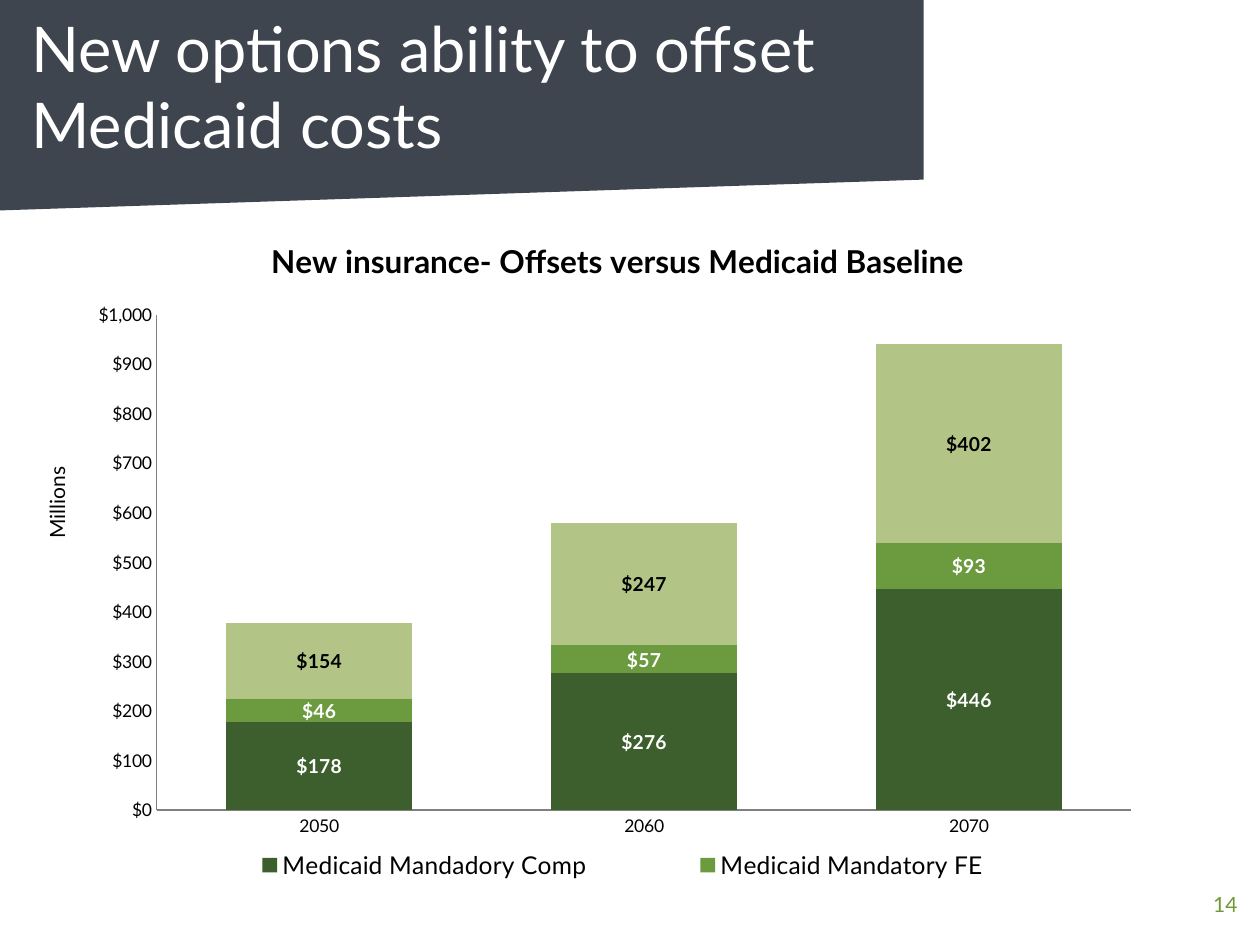
import lxml.etree
import pptx
import pptx.chart.data
import pptx.dml.color
import pptx.enum.chart
import pptx.enum.shapes
import pptx.enum.text
import pptx.oxml
import pptx.oxml.ns
import pptx.util
from pptx.util import Inches

RGBColor = pptx.dml.color.RGBColor
SLATE = RGBColor(0x3E, 0x45, 0x4F)
WHITE = RGBColor(0xFF, 0xFF, 0xFF)
BLACK = RGBColor(0, 0, 0)
AXIS_GRAY = RGBColor(0x80, 0x80, 0x80)
NUMBER_GREEN = RGBColor(0x6D, 0x9A, 0x35)
DARK_GREEN = RGBColor(0x3C, 0x5F, 0x2D)
MID_GREEN = RGBColor(0x6C, 0x9A, 0x3F)
LIGHT_GREEN = RGBColor(0xB3, 0xC5, 0x86)

FONT = "Lato"
DOLLARS = '"$"#,##0'
YEARS = ("2050", "2060", "2070")
SERIES = (
    ("Medicaid Mandadory Comp", (178, 276, 446), DARK_GREEN, WHITE),
    ("Medicaid Mandatory FE", (46, 57, 93), MID_GREEN, WHITE),
    ("", (154, 247, 402), LIGHT_GREEN, BLACK),
)


def style_font(font, size, color, bold=False):
    """Apply the deck font with a size, colour and weight."""
    font.name = FONT
    font.size = pptx.util.Pt(size)
    font.color.rgb = color
    font.bold = bold


def add_block(slide, kind, left, top, width, height, color):
    """Add a plain filled shape without outline or shadow."""
    shape = slide.shapes.add_shape(kind, left, top, width, height)
    shape.shadow.inherit = False
    shape.fill.solid()
    shape.fill.fore_color.rgb = color
    shape.line.fill.background()
    return shape


def add_label(slide, left, top, width, height, text, size, color):
    """Add a wrapped text box with one styled paragraph."""
    text_box = slide.shapes.add_textbox(left, top, width, height)
    text_frame = text_box.text_frame
    text_frame.word_wrap = True
    text_frame.text = text
    style_font(text_frame.paragraphs[0].runs[0].font, size, color)


def add_header(slide, left, top, width, height):
    """Draw the slanted banner and its title."""
    shapes = pptx.enum.shapes.MSO_SHAPE
    banner = add_block(slide, shapes.FLOWCHART_MANUAL_INPUT, left, top, width, height, SLATE)
    banner.rotation = 180
    cover = Inches(2.67)
    add_block(slide, shapes.RECTANGLE, left + width - cover, top, cover, Inches(1.5), WHITE)
    add_label(slide, left + Inches(0.15), top + Inches(0.03), Inches(7.26), Inches(1.47),
              "New options ability to offset Medicaid costs", 36, WHITE)


def make_layout(x, y, width, height, inner=False):
    """Build a manual chart layout from fractions of the chart area."""
    target = '<c:layoutTarget val="inner"/>' if inner else ""
    return pptx.oxml.parse_xml(
        f'<c:layout {pptx.oxml.ns.nsdecls("c")}><c:manualLayout>{target}'
        '<c:xMode val="edge"/><c:yMode val="edge"/>'
        f'<c:x val="{x}"/><c:y val="{y}"/><c:w val="{width}"/><c:h val="{height}"/>'
        "</c:manualLayout></c:layout>")


def remove_layout(element):
    """Drop the automatic layout of a chart part."""
    for layout in element.findall(pptx.oxml.ns.qn("c:layout")):
        element.remove(layout)


def format_legend(chart):
    """Place the legend below the plot with entries for the named series."""
    chart.has_legend = True
    legend = chart.legend
    legend.position = pptx.enum.chart.XL_LEGEND_POSITION.BOTTOM
    legend.include_in_layout = False
    style_font(legend.font, 14, BLACK)
    element = chart.element.find(".//" + pptx.oxml.ns.qn("c:legend"))
    remove_layout(element)
    position = element.find(pptx.oxml.ns.qn("c:legendPos"))
    position.addnext(make_layout(0.07, 0.92, 0.87, 0.06))
    position.addnext(pptx.oxml.parse_xml(
        f'<c:legendEntry {pptx.oxml.ns.nsdecls("c")}>'
        f'<c:idx val="{len(SERIES) - 1}"/><c:delete val="1"/></c:legendEntry>'))


def format_axes(chart):
    """Style both axes without gridlines or tick marks."""
    for axis in (chart.category_axis, chart.value_axis):
        axis.has_major_gridlines = False
        axis.major_tick_mark = pptx.enum.chart.XL_TICK_MARK.NONE
        axis.minor_tick_mark = pptx.enum.chart.XL_TICK_MARK.NONE
        axis.format.line.color.rgb = AXIS_GRAY
        style_font(axis.tick_labels.font, 10, BLACK)
    value_axis = chart.value_axis
    value_axis.minimum_scale, value_axis.maximum_scale = 0, 1000
    value_axis.major_unit = 100
    value_axis.tick_labels.number_format = DOLLARS + ";[Red]" + DOLLARS
    value_axis.tick_labels.number_format_is_linked = False


def format_series(plot):
    """Colour each stacked series and label its values."""
    plot.gap_width = 75
    plot.overlap = 100
    plot.vary_by_categories = False
    for series, (_, _, fill_color, label_color) in zip(plot.series, SERIES):
        series.format.fill.solid()
        series.format.fill.fore_color.rgb = fill_color
        labels = series.data_labels
        labels.show_value = True
        labels.number_format = DOLLARS
        labels.number_format_is_linked = False
        style_font(labels.font, 11, label_color, bold=True)


def add_offset_chart(slide, left, top, width, height):
    """Add the stacked column chart and its vertical unit label."""
    chart_data = pptx.chart.data.CategoryChartData(number_format=DOLLARS)
    chart_data.categories = YEARS
    for name, values, _, _ in SERIES:
        chart_data.add_series(name, values)
    chart = slide.shapes.add_chart(
        pptx.enum.chart.XL_CHART_TYPE.COLUMN_STACKED, left, top, width, height, chart_data).chart
    style_font(chart.font, 10, BLACK)
    chart.has_title = True
    title_frame = chart.chart_title.text_frame
    title_frame.text = "New insurance- Offsets versus Medicaid Baseline"
    style_font(title_frame.paragraphs[0].runs[0].font, 18, BLACK, bold=True)
    format_series(chart.plots[0])
    format_axes(chart)
    format_legend(chart)
    plot_area = chart.element.find(".//" + pptx.oxml.ns.qn("c:plotArea"))
    remove_layout(plot_area)
    plot_area.insert(0, make_layout(0.07, 0.15, 0.91, 0.72, inner=True))

    unit_width = Inches(0.4)
    unit = add_block(slide, pptx.enum.shapes.MSO_SHAPE.RECTANGLE, left - unit_width,
                     top + Inches(1.53), unit_width, Inches(1.56), WHITE)
    text_frame = unit.text_frame
    text_frame.text = "Millions"
    text_frame.vertical_anchor = pptx.enum.text.MSO_ANCHOR.MIDDLE
    text_frame.paragraphs[0].alignment = pptx.enum.text.PP_ALIGN.CENTER
    style_font(text_frame.paragraphs[0].runs[0].font, 12, BLACK)
    unit.element.find(".//" + pptx.oxml.ns.qn("a:bodyPr")).set("vert", "vert270")


def main():
    """Build the slide and save the presentation."""
    presentation = pptx.Presentation()
    presentation.slide_width = Inches(10)
    presentation.slide_height = Inches(7.5)
    slide = presentation.slides.add_slide(presentation.slide_layouts[6])
    add_header(slide, 0, 0, presentation.slide_width, Inches(1.67))
    add_label(slide, Inches(9.53), Inches(7.03), Inches(0.55), Inches(0.55), "14", 12, NUMBER_GREEN)
    add_offset_chart(slide, Inches(0.65), Inches(1.68), Inches(8.5), Inches(5.46))
    presentation.save("out.pptx")


if __name__ == "__main__":
    main()
